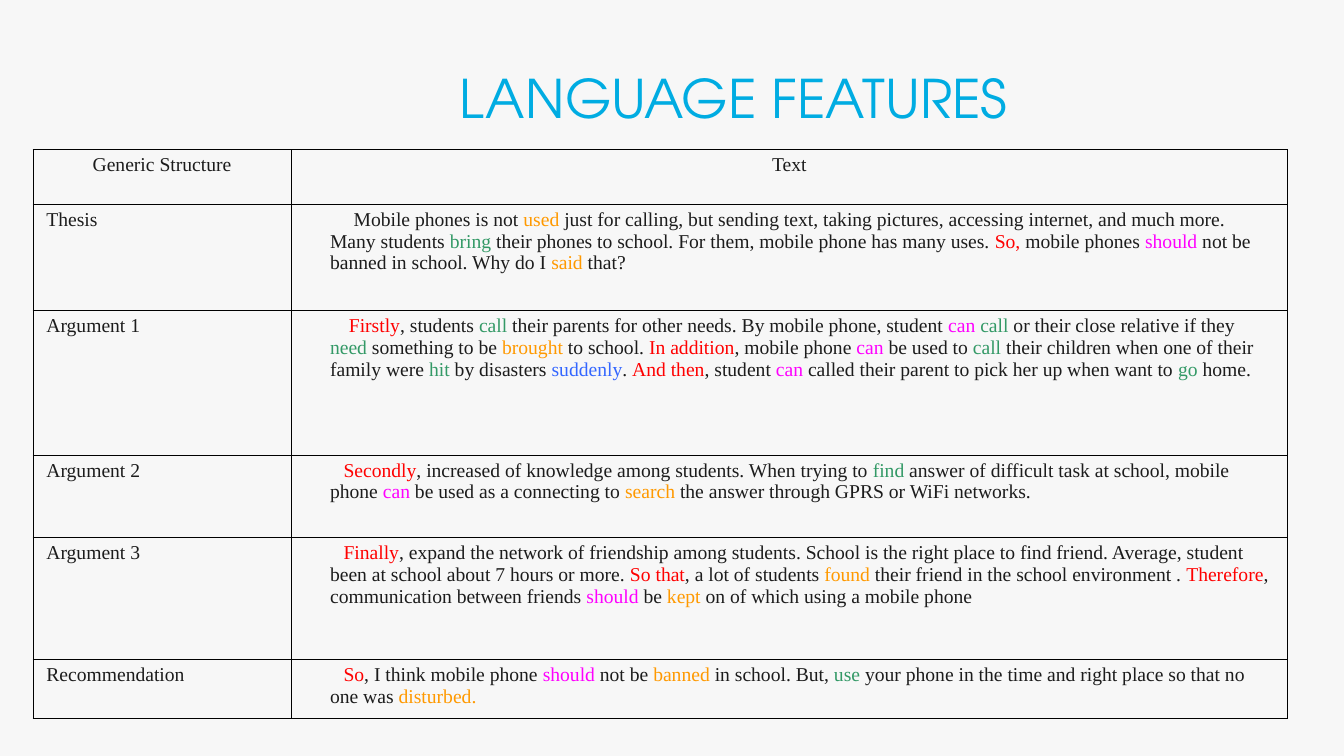
from dataclasses import dataclass

from lxml import etree
from pptx import Presentation
from pptx.dml.color import RGBColor
from pptx.enum import text
from pptx.oxml import ns
from pptx.util import Inches, Pt


@dataclass(frozen=True)
class Theme:
    background: str = "F7F7F7"
    title: str = "00ACE2"
    border: str = "000000"
    plain: str = "1C1C1C"
    connective: str = "FF0000"
    modal: str = "FF00FF"
    present: str = "339966"
    past: str = "FF9900"
    adverb: str = "3366FF"
    title_font: str = "TeX Gyre Adventor"
    body_font: str = "Times New Roman"
    title_size: int = 57
    body_size: int = 21
    border_width: int = 1


THEME = Theme()
COLUMN_WIDTHS = [3.84, 14.82]
ROW_HEIGHTS = [0.81, 1.58, 2.15, 1.23, 1.81, 0.88]
HANGING = 0.38
HEADINGS = ["Generic Structure", "Text"]

SECTIONS = [
    ("Thesis", 0.35, [
        ("Mobile phones is not ", "plain"), ("used", "past"),
        (" just for calling, but sending text, taking pictures, accessing internet, "
         "and much more. Many students ", "plain"),
        ("bring", "present"),
        (" their phones to school. For them, mobile phone has many uses. ", "plain"),
        ("So,", "connective"), (" mobile phones ", "plain"), ("should ", "modal"),
        ("not be banned in school. Why do I ", "plain"), ("said", "past"),
        (" that?", "plain"),
    ]),
    ("Argument 1", 0.28, [
        ("Firstly", "connective"), (", students ", "plain"), ("call ", "present"),
        ("their parents for other needs. By mobile phone, student ", "plain"),
        ("can ", "modal"), ("call ", "present"),
        ("or their close relative if they ", "plain"), ("need ", "present"),
        ("something to be ", "plain"), ("brought", "past"), (" to school. ", "plain"),
        ("In addition", "connective"), (", mobile phone ", "plain"), ("can", "modal"),
        (" be used to ", "plain"), ("call", "present"),
        (" their children when one of their family were ", "plain"),
        ("hit", "present"), (" by disasters ", "plain"), ("suddenly", "adverb"),
        (". ", "plain"), ("And then", "connective"), (", student ", "plain"),
        ("can ", "modal"),
        ("called their parent to pick her up when want to ", "plain"),
        ("go", "present"), (" home.", "plain"),
    ]),
    ("Argument 2", 0.2, [
        ("Secondly", "connective"),
        (", increased of knowledge among students. When trying to ", "plain"),
        ("find", "present"),
        (" answer of difficult task at school, mobile phone ", "plain"),
        ("can", "modal"), (" be used as a connecting to ", "plain"),
        ("search", "past"), (" the answer through GPRS or WiFi networks.", "plain"),
    ]),
    ("Argument 3", 0.2, [
        ("Finally", "connective"),
        (", expand the network of friendship among students. School is the right place "
         "to find friend. Average, student been at school about 7 hours or more. ", "plain"),
        ("So that", "connective"), (", a lot of students ", "plain"),
        ("found", "past"), (" their friend in the school environment . ", "plain"),
        ("Therefore", "connective"), (", communication between friends ", "plain"),
        ("should ", "modal"), ("be ", "plain"), ("kept ", "past"),
        ("on of which using a mobile phone", "plain"),
    ]),
    ("Recommendation", 0.2, [
        ("So", "connective"), (", I think mobile phone ", "plain"),
        ("should ", "modal"), ("not be ", "plain"), ("banned", "past"),
        (" in school. But, ", "plain"), ("use", "present"),
        (" your phone in the time and right place so that no one was ", "plain"),
        ("disturbed.", "past"),
    ]),
]


def add_run(paragraph, content, font, size, color):
    run = paragraph.add_run()
    run.text = content
    run.font.name = font
    run.font.size = Pt(size)
    run.font.color.rgb = RGBColor.from_string(color)


def set_borders(cell):
    properties = cell._tc.get_or_add_tcPr()
    for position, side in enumerate(("lnL", "lnR", "lnT", "lnB")):
        line = etree.Element(ns.qn(f"a:{side}"), w=str(Pt(THEME.border_width)))
        fill = etree.SubElement(line, ns.qn("a:solidFill"))
        etree.SubElement(fill, ns.qn("a:srgbClr"), val=THEME.border)
        properties.insert(position, line)


def fill_cell(cell, runs, alignment=text.PP_ALIGN.LEFT, first_line=None):
    cell.margin_left = cell.margin_right = Inches(0.2)
    cell.margin_top = cell.margin_bottom = Inches(0.07)
    cell.fill.background()
    set_borders(cell)
    paragraph = cell.text_frame.paragraphs[0]
    paragraph.alignment = alignment
    if first_line is not None:
        properties = paragraph._p.get_or_add_pPr()
        properties.set("marL", str(Inches(HANGING)))
        properties.set("indent", str(Inches(first_line)))
    for content, role in runs:
        add_run(paragraph, content, THEME.body_font, THEME.body_size, getattr(THEME, role))


def add_features_table(slide, left, top, width, height):
    frame = slide.shapes.add_table(
        len(ROW_HEIGHTS), len(COLUMN_WIDTHS),
        Inches(left), Inches(top), Inches(width), Inches(height))
    table = frame.table
    table.first_row = table.horz_banding = False
    for column, share in zip(table.columns, COLUMN_WIDTHS):
        column.width = Inches(width * share / sum(COLUMN_WIDTHS))
    for row, share in zip(table.rows, ROW_HEIGHTS):
        row.height = Inches(height * share / sum(ROW_HEIGHTS))
    for index, heading in enumerate(HEADINGS):
        fill_cell(table.cell(0, index), [(heading, "plain")], text.PP_ALIGN.CENTER)
    for index, (label, first_line, runs) in enumerate(SECTIONS, start=1):
        fill_cell(table.cell(index, 0), [(label, "plain")])
        fill_cell(table.cell(index, 1), runs, first_line=first_line)


def add_title(slide, left, top, width, height):
    box = slide.shapes.add_textbox(Inches(left), Inches(top), Inches(width), Inches(height))
    frame = box.text_frame
    frame.word_wrap = True
    frame.auto_size = text.MSO_AUTO_SIZE.SHAPE_TO_FIT_TEXT
    frame.margin_left = frame.margin_right = Inches(0.18)
    frame.margin_top = frame.margin_bottom = Inches(0.09)
    paragraph = frame.paragraphs[0]
    paragraph.alignment = text.PP_ALIGN.CENTER
    add_run(paragraph, "LANGUAGE FEATURES", THEME.title_font, THEME.title_size, THEME.title)


def main():
    presentation = Presentation()
    presentation.slide_width = Inches(20)
    presentation.slide_height = Inches(11.25)
    slide = presentation.slides.add_slide(presentation.slide_layouts[6])
    slide.background.fill.solid()
    slide.background.fill.fore_color.rgb = RGBColor.from_string(THEME.background)
    add_features_table(slide, 0.49, 2.23, 18.67, 8.46)
    add_title(slide, 3.5, 0.88, 14.83, 1.14)
    presentation.save("out.pptx")


if __name__ == "__main__":
    main()
